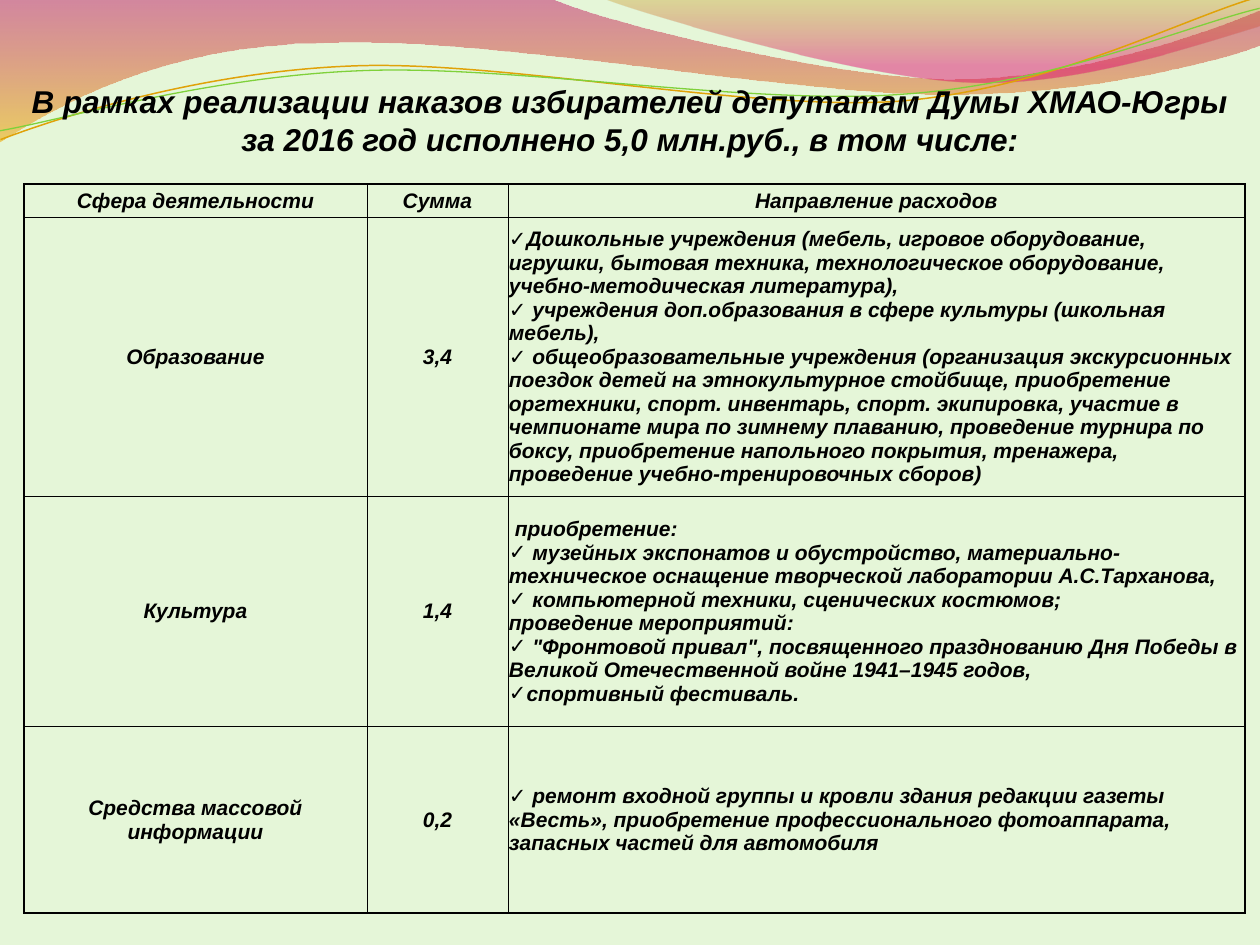
from lxml.etree import SubElement
from pptx import Presentation
from pptx.dml.color import RGBColor
from pptx.enum.text import MSO_ANCHOR as Anchor, MSO_AUTO_SIZE as AutoSize, PP_ALIGN as Align
from pptx.oxml import parse_xml
from pptx.oxml.ns import nsdecls, qn
from pptx.util import Pt

SCALE = 914400 / 126
CHECK = "✓"
WAVES = [
    ([(0, 0), (554, 0), (600, 21, 837, 79, 955, 79), (1075, 79, 1207, 33, 1260, 11),
      (1261, 45), (1239, 55, 1096, 96, 940, 94), (783, 94, 481, 35, 324, 43),
      (163, 45, 58, 105, -1, 142)],
     [(0, "BD0059", 45), (1, "F0AB00", 55)]),
    ([(604, -1), (641, 14, 859, 78, 969, 82), (1079, 87, 1211, 40, 1260, 26), (1260, 0)],
     [(0, "C38B00", 30), (0.8, "E1006B", 45)]),
]
LINES = [
    ([(-2, 110), (59, 90, 200, 52, 350, 53), (499, 53, 745, 117, 896, 114),
      (1049, 109, 1184, 45, 1260, 27)], "E0A209", 0.85),
    ([(-2, 101), (57, 94, 207, 57, 358, 58), (509, 58, 750, 112, 902, 107),
      (1052, 104, 1188, 52, 1262, 38)], "7FD13B", 0.75),
]
TITLE = ("В рамках реализации наказов избирателей депутатам Думы ХМАО-Югры "
         "за 2016 год исполнено 5,0 млн.руб., в том числе:")
COLUMNS = [343, 141, 737]
ROWS = [33, 279, 230, 187]
CELLS = [
    ["Сфера деятельности", "Сумма", "Направление расходов"],
    ["Образование", "3,4", [
        "✓Дошкольные учреждения (мебель, игровое оборудование, игрушки, бытовая техника, "
        "технологическое оборудование, учебно-методическая литература),",
        "✓ учреждения доп.образования в сфере культуры (школьная мебель),",
        "✓ общеобразовательные учреждения (организация экскурсионных поездок детей на "
        "этнокультурное стойбище, приобретение оргтехники, спорт. инвентарь, спорт. экипировка, "
        "участие в чемпионате мира по зимнему плаванию, проведение турнира по боксу, "
        "приобретение напольного покрытия, тренажера, проведение учебно-тренировочных сборов)"]],
    ["Культура", "1,4", [
        " приобретение:",
        "✓ музейных экспонатов и обустройство, материально-техническое оснащение "
        "творческой лаборатории А.С.Тарханова,",
        "✓ компьютерной техники, сценических костюмов;",
        "проведение мероприятий:",
        '✓ "Фронтовой привал", посвященного празднованию Дня Победы в Великой '
        "Отечественной войне 1941–1945 годов,",
        "✓спортивный фестиваль."]],
    ["Средства массовой информации", "0,2", [
        "✓ ремонт входной группы и кровли здания редакции газеты «Весть», приобретение "
        "профессионального фотоаппарата, запасных частей для автомобиля"]],
]


def px(value):
    return round(value * SCALE)


def color(code):
    return RGBColor.from_string(code)


class Deck:
    """Holds the style and the current slide."""

    font_name = "Arial"
    ink = "000000"

    def __init__(self, width, height, background):
        self.presentation = Presentation()
        self.presentation.slide_width = px(width)
        self.presentation.slide_height = px(height)
        self.slide = self.presentation.slides.add_slide(self.presentation.slide_layouts[5])
        fill = self.slide.background.fill
        fill.solid()
        fill.fore_color.rgb = color(background)

    def outline(self, segments, close):
        ends = [(px(segment[-2]), px(segment[-1])) for segment in segments]
        builder = self.slide.shapes.build_freeform(*ends[0], scale=1.0)
        builder.add_line_segments(ends[1:], close=close)
        shape = builder.convert_to_shape()
        shape.shadow.inherit = False
        straights = list(shape._element.spPr.iter(qn("a:lnTo")))
        for straight, segment in zip(straights, segments[1:]):
            if len(segment) == 6:
                self.bend(straight, segment[:4], shape.left, shape.top)
        return shape

    def bend(self, straight, controls, left, top):
        straight.tag = qn("a:cubicBezTo")
        for index in (0, 1):
            x, y = controls[2 * index:2 * index + 2]
            point = SubElement(straight, qn("a:pt"), x=str(px(x) - left), y=str(px(y) - top))
            straight.insert(index, point)

    def wave(self, segments, stops):
        shape = self.outline(segments, True)
        shape.line.fill.background()
        shape.fill.gradient()
        shape.fill.gradient_angle = 270
        for stop, (position, code, _) in zip(shape.fill.gradient_stops, stops):
            stop.position = position
            stop.color.rgb = color(code)
        colors = shape._element.spPr.iter(qn("a:srgbClr"))
        for element, (_, _, opacity) in zip(colors, stops):
            SubElement(element, qn("a:alpha"), val=str(opacity * 1000))

    def line(self, segments, code, width):
        shape = self.outline(segments, False)
        shape.rotation = 357.3
        shape.fill.background()
        shape.line.color.rgb = color(code)
        shape.line.width = Pt(width)

    def style(self, paragraph, size, align):
        paragraph.alignment = align
        font = paragraph.font
        font.name, font.size, font.bold, font.italic = self.font_name, Pt(size), True, True
        font.color.rgb = color(self.ink)

    def title(self, text, left, top, width, height):
        shape = self.slide.shapes.title
        shape.left, shape.top, shape.width, shape.height = map(px, (left, top, width, height))
        frame = shape.text_frame
        frame.text = text
        frame.word_wrap = True
        frame.auto_size = AutoSize.NONE
        frame.vertical_anchor = Anchor.TOP
        self.style(frame.paragraphs[0], 18, Align.CENTER)
        self.slide.shapes._spTree.append(shape._element)

    def bullet(self, paragraph):
        properties = paragraph._p.get_or_add_pPr()
        properties.set("marL", "0")
        properties.set("indent", "0")
        SubElement(properties, qn("a:buFont"), typeface=self.font_name)
        SubElement(properties, qn("a:buChar"), char=CHECK)

    def borders(self, cell, outer):
        properties = cell._tc.get_or_add_tcPr()
        for index, side in enumerate("LRTB"):
            width = Pt(1 if side in outer else 0.5)
            properties.insert(index, parse_xml(
                f'<a:ln{side} {nsdecls("a")} w="{width}"><a:solidFill>'
                f'<a:srgbClr val="{self.ink}"/></a:solidFill></a:ln{side}>'))

    def cell(self, cell, content, outer):
        cell.fill.background()
        self.borders(cell, outer)
        cell.vertical_anchor = Anchor.MIDDLE
        cell.margin_left = cell.margin_right = cell.margin_top = px(1)
        cell.margin_bottom = 0
        is_list = isinstance(content, list)
        lines = content if is_list else [content]
        frame = cell.text_frame
        for index, line in enumerate(lines):
            paragraph = frame.add_paragraph() if index else frame.paragraphs[0]
            paragraph.text = line.removeprefix(CHECK)
            if line.startswith(CHECK):
                self.bullet(paragraph)
            self.style(paragraph, 12, Align.LEFT if is_list else Align.CENTER)

    def table(self, left, top, columns, rows, cells):
        bounds = map(px, (left, top, sum(columns), sum(rows)))
        table = self.slide.shapes.add_table(len(rows), len(columns), *bounds).table
        table.first_row = table.horz_banding = False
        for column, width in zip(table.columns, columns):
            column.width = px(width)
        for row, height in zip(table.rows, rows):
            row.height = px(height)
        last_row, last_column = len(rows) - 1, len(columns) - 1
        for r, contents in enumerate(cells):
            for c, content in enumerate(contents):
                edges = {"L": c == 0, "R": c == last_column, "T": r == 0, "B": r == last_row}
                outer = [side for side, on_edge in edges.items() if on_edge]
                self.cell(table.cell(r, c), content, outer)


def main():
    deck = Deck(1260, 945, "E5F6D8")
    for wave in WAVES:
        deck.wave(*wave)
    for line in LINES:
        deck.line(*line)
    deck.title(TITLE, 0, 76, 1260, 190)
    deck.table(24, 184, COLUMNS, ROWS, CELLS)
    deck.presentation.save("out.pptx")


if __name__ == "__main__":
    main()
